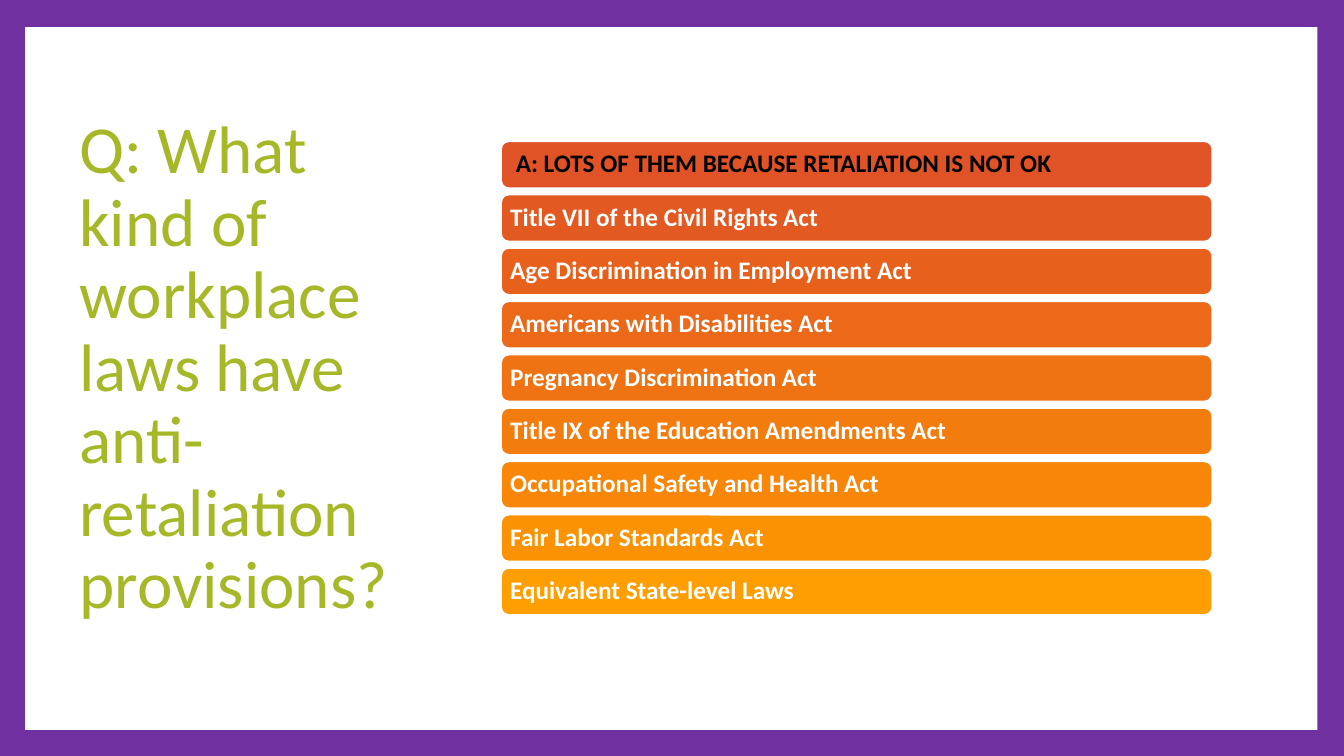
from pptx import Presentation
from pptx.dml.color import RGBColor
from pptx.enum.shapes import MSO_SHAPE
from pptx.enum.text import MSO_ANCHOR, PP_ALIGN
from pptx.util import Pt

RECTANGLE = MSO_SHAPE.RECTANGLE
ROUNDED = MSO_SHAPE.ROUNDED_RECTANGLE
MIDDLE = MSO_ANCHOR.MIDDLE
LEFT = PP_ALIGN.LEFT

PURPLE = RGBColor(0x70, 0x30, 0xA0)
GREEN = RGBColor(0xA6, 0xB7, 0x27)
WHITE = RGBColor(0xFF, 0xFF, 0xFF)
BLACK = RGBColor(0x01, 0x00, 0x00)

FONT = "Calibri"
QUESTION = "Q: What kind of workplace laws have anti-retaliation provisions?"

# Answer bars: text, fill, text colour
BARS = [
    (" A: LOTS OF THEM BECAUSE RETALIATION IS NOT OK", RGBColor(0xDF, 0x53, 0x27), BLACK),
    ("Title VII of the Civil Rights Act", RGBColor(0xE3, 0x59, 0x22), WHITE),
    ("Age Discrimination in Employment Act", RGBColor(0xE7, 0x61, 0x1D), WHITE),
    ("Americans with Disabilities Act", RGBColor(0xEB, 0x69, 0x18), WHITE),
    ("Pregnancy Discrimination Act", RGBColor(0xEF, 0x72, 0x13), WHITE),
    ("Title IX of the Education Amendments Act", RGBColor(0xF3, 0x7C, 0x0E), WHITE),
    ("Occupational Safety and Health Act", RGBColor(0xF7, 0x86, 0x09), WHITE),
    ("Fair Labor Standards Act", RGBColor(0xFB, 0x92, 0x04), WHITE),
    ("Equivalent State-level Laws", RGBColor(0xFE, 0x9E, 0x00), WHITE),
]
BAR_LEFT, BAR_TOP, BAR_WIDTH, BAR_HEIGHT = 357.8, 100.8, 508.3, 33.8
BAR_PITCH = 38.1


def set_all(target, values):
    for name, value in values.items():
        setattr(target, name, value)


def add_block(page, kind, left, top, width, height, fill):
    block = page.shapes.add_shape(kind, Pt(left), Pt(top), Pt(width), Pt(height))
    block.shadow.inherit = False
    block.fill.solid()
    block.fill.fore_color.rgb = fill
    block.line.fill.background()
    return block


def write_text(shape, text, size, color, bold=False, inset=(7.2, 3.6)):
    across, down = Pt(inset[0]), Pt(inset[1])
    frame = shape.text_frame
    set_all(frame, {"word_wrap": True, "vertical_anchor": MIDDLE,
                    "margin_left": across, "margin_right": across,
                    "margin_top": down, "margin_bottom": down})
    para = frame.paragraphs[0]
    set_all(para, {"alignment": LEFT, "line_spacing": 0.9})
    span = para.add_run()
    span.text = text
    set_all(span.font, {"name": FONT, "size": Pt(size), "bold": bold})
    span.font.color.rgb = color


def add_question(page):
    box = page.shapes.add_textbox(Pt(49.7), Pt(43.2), Pt(265), Pt(441.4))
    write_text(box, QUESTION, 48, GREEN)


def add_bar(page, index, text, fill, color):
    bar = add_block(page, ROUNDED, BAR_LEFT, BAR_TOP + index * BAR_PITCH,
                    BAR_WIDTH, BAR_HEIGHT, fill)
    bar.line.color.rgb = WHITE
    bar.line.width = Pt(1.5)
    write_text(bar, text, 18, color, bold=True, inset=(5, 3))


def main():
    deck = Presentation()
    set_all(deck, {"slide_width": Pt(960), "slide_height": Pt(540)})
    page = deck.slides.add_slide(deck.slide_layouts[6])

    # Purple frame around a white panel
    page.background.fill.solid()
    page.background.fill.fore_color.rgb = PURPLE
    add_block(page, RECTANGLE, 18, 19.4, 923, 502, WHITE)

    # Question on the left, answers on the right
    add_question(page)
    for index, (text, fill, color) in enumerate(BARS):
        add_bar(page, index, text, fill, color)

    deck.save("out.pptx")


if __name__ == "__main__":
    main()
